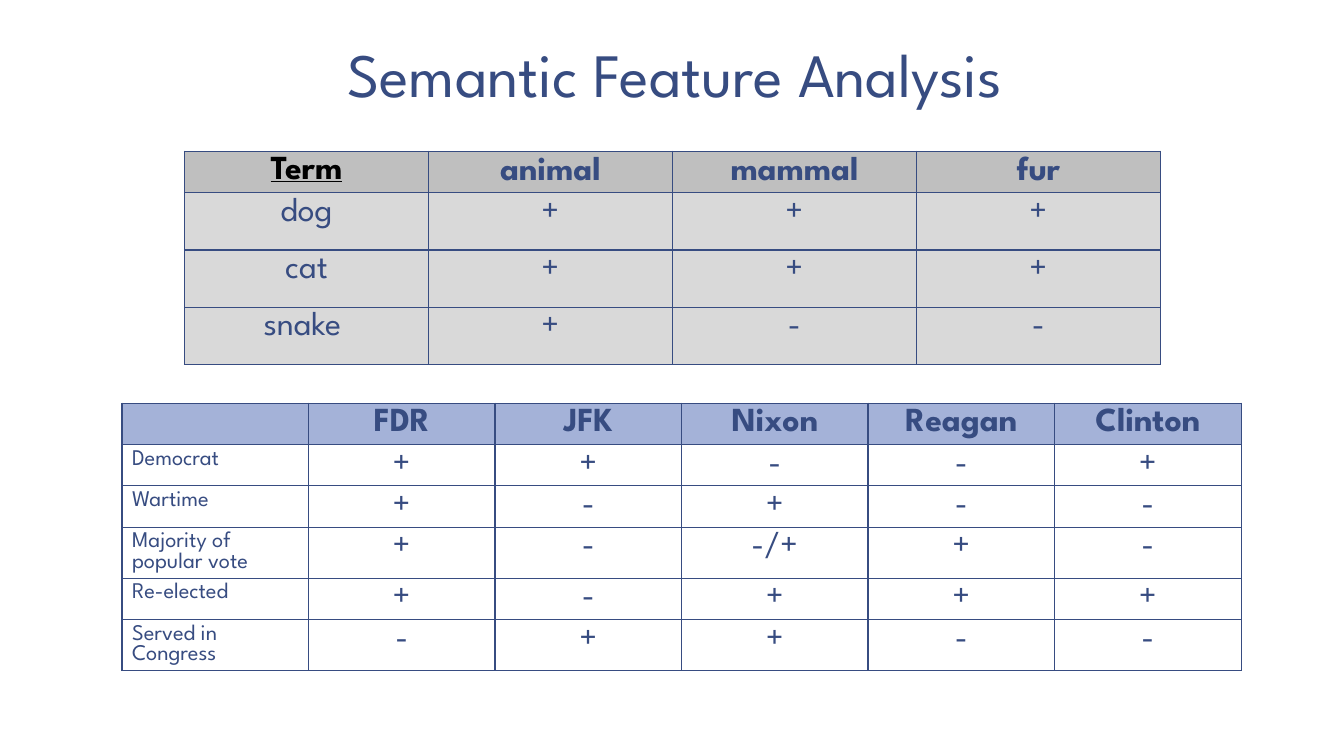
"""Build the Semantic Feature Analysis slide with its two feature tables."""
import pptx
import pptx.dml.color
import pptx.enum.text
import pptx.oxml
import pptx.oxml.ns
import pptx.util

Inches, Pt = pptx.util.Inches, pptx.util.Pt
RGBColor = pptx.dml.color.RGBColor
PP_ALIGN, MSO_ANCHOR = pptx.enum.text.PP_ALIGN, pptx.enum.text.MSO_ANCHOR

FONT = "League Spartan"
NAVY = RGBColor(0x37, 0x4C, 0x81)
BLACK = RGBColor(0, 0, 0)
GREY = RGBColor(0xBF, 0xBF, 0xBF)
LIGHT_GREY = RGBColor(0xD9, 0xD9, 0xD9)
PERIWINKLE = RGBColor(0xA4, 0xB2, 0xD8)

ANIMALS = [
    ["Term", "animal", "mammal", "fur"],
    ["dog", "+", "+", "+"],
    ["cat", "+", "+", "+"],
    ["snake ", "+", "-", "-"],
]
PRESIDENTS = [
    ["", "FDR", "JFK", "Nixon", "Reagan", "Clinton"],
    ["Democrat", "+", "+", "-", "-", "+"],
    ["Wartime", "+", "-", "+", "-", "-"],
    ["Majority of popular vote", "+", "-", "-/+", "+", "-"],
    ["Re-elected", "+", "-", "+", "+", "+"],
    ["Served in Congress", "-", "+", "+", "-", "-"],
]


def style_text(p, size, color=NAVY, bold=False):
    for r in p.runs:
        r.font.name = FONT
        r.font.size = Pt(size)
        r.font.bold = bold
        r.font.color.rgb = color


def add_feature_table(s, rows, left, top, col_width, heights, head_fill, body_fill):
    frame = s.shapes.add_table(
        len(rows), len(rows[0]), Inches(left), Inches(top),
        Inches(col_width * len(rows[0])), Inches(sum(heights)))
    table = frame.table
    table.horz_banding = False
    for column in table.columns:
        column.width = Inches(col_width)
    for i, texts in enumerate(rows):
        table.rows[i].height = Inches(heights[i])
        for j, text in enumerate(texts):
            cell = table.cell(i, j)
            tc_pr = cell._tc.get_or_add_tcPr()
            for side in ("lnL", "lnR", "lnT", "lnB"):
                tc_pr.append(pptx.oxml.parse_xml(
                    f'<a:{side} {pptx.oxml.ns.nsdecls("a")} w="12700"><a:solidFill>'
                    f'<a:srgbClr val="{NAVY}"/></a:solidFill></a:{side}>'))
            fill = head_fill if i == 0 else body_fill
            if fill is None:
                cell.fill.background()
            else:
                cell.fill.solid()
                cell.fill.fore_color.rgb = fill
            cell.text_frame.text = text
            p = cell.text_frame.paragraphs[0]
            p.alignment = PP_ALIGN.CENTER
            style_text(p, 24, bold=i == 0)
    return table


prs = pptx.Presentation()
prs.slide_width, prs.slide_height = Inches(13.33), Inches(7.5)
s = prs.slides.add_slide(prs.slide_layouts[5])

title = s.shapes.title
title.left, title.top = Inches(1.22), Inches(0.08)
title.width, title.height = Inches(11.11), Inches(1.08)
tf = title.text_frame
tf.text = "Semantic Feature Analysis "
tf.vertical_anchor = MSO_ANCHOR.BOTTOM
tf.margin_left = tf.margin_right = Inches(0.13)
tf.margin_top = tf.margin_bottom = Inches(0.07)
p = tf.paragraphs[0]
p.alignment = PP_ALIGN.CENTER
p.line_spacing = 0.85
style_text(p, 44)

animals = add_feature_table(
    s, ANIMALS, 1.83, 1.5, 2.42, [0.41] + [0.57] * 3, GREY, LIGHT_GREY)
term = animals.cell(0, 0).text_frame.paragraphs[0]
style_text(term, 24, BLACK, True)
term.runs[0].font.underline = True
for j in range(1, len(ANIMALS[0])):
    animals.cell(0, j).vertical_anchor = MSO_ANCHOR.BOTTOM

presidents = add_feature_table(
    s, PRESIDENTS, 1.21, 4, 1.85, [0.41] * 6, PERIWINKLE, None)
for i in range(1, len(PRESIDENTS)):
    p = presidents.cell(i, 0).text_frame.paragraphs[0]
    p.alignment = PP_ALIGN.LEFT
    style_text(p, 16)

prs.save("out.pptx")
